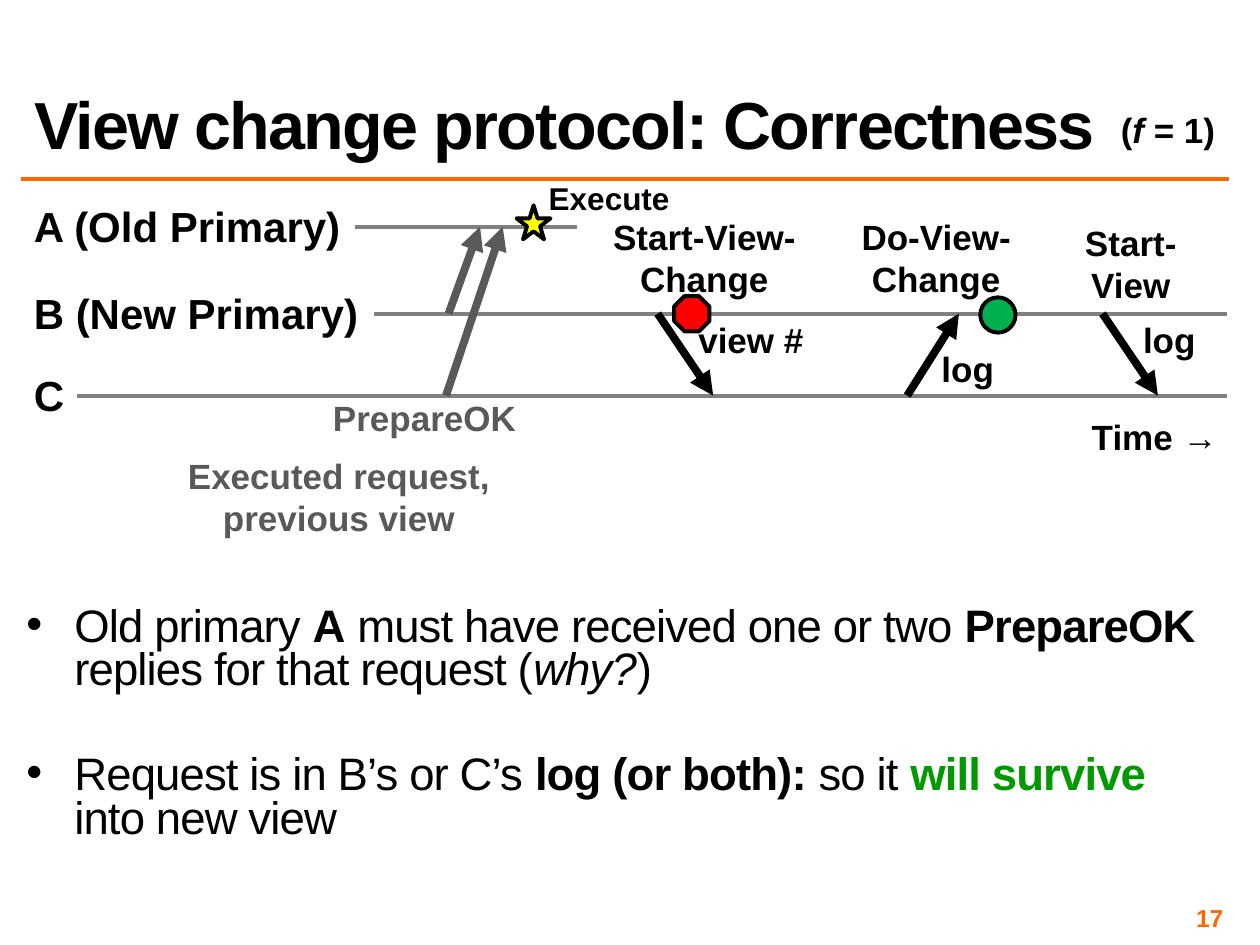
from pptx import Presentation
from pptx.dml.color import RGBColor
from pptx.enum.shapes import MSO_CONNECTOR, MSO_SHAPE
from pptx.enum.text import MSO_ANCHOR, PP_ALIGN
from pptx.oxml.ns import qn
from pptx.util import Inches, Pt
from lxml.etree import SubElement

BLACK = RGBColor(0x00, 0x00, 0x00)
GRAY = RGBColor(0x80, 0x80, 0x80)
DARK_GRAY = RGBColor(0x59, 0x59, 0x59)
ORANGE = RGBColor(0xFF, 0x66, 0x00)
DARK_GREEN = RGBColor(0x00, 0x99, 0x00)
GREEN = RGBColor(0x00, 0xB0, 0x50)
RED = RGBColor(0xFF, 0x00, 0x00)
YELLOW = RGBColor(0xFF, 0xFF, 0x00)
LANES = {"A": 0.43, "B": 1.12, "C": 1.77}


def add_run(p, text, size, color=BLACK, bold=True, italic=False, spacing=0):
    """Append one formatted run to a paragraph."""
    r = p.add_run()
    r.text = text
    r.font.name = "Arial"
    r.font.size = Pt(size)
    r.font.bold = bold
    r.font.italic = italic
    r.font.color.rgb = color
    if spacing:
        r._r.get_or_add_rPr().set("spc", str(int(spacing * 100)))


def add_label(s, box, lines, size=20, color=BLACK, align=PP_ALIGN.CENTER, wrap=False):
    """Add a bold text box with one paragraph per line."""
    tf = s.shapes.add_textbox(*map(Inches, box)).text_frame
    tf.word_wrap = wrap
    for i, line in enumerate(lines):
        p = tf.paragraphs[0] if i == 0 else tf.add_paragraph()
        p.alignment = align
        add_run(p, line, size, color)
    return tf


def add_line(s, start, end, color, width, arrow=False):
    """Draw a straight line, with an optional arrowhead at its end."""
    c = s.shapes.add_connector(MSO_CONNECTOR.STRAIGHT, *map(Inches, (*start, *end)))
    c.line.color.rgb = color
    c.line.width = Pt(width)
    SubElement(c._element.spPr, qn("a:effectLst"))
    if arrow:
        SubElement(c.line._get_or_add_ln(), qn("a:tailEnd"), type="triangle")


def add_marker(s, kind, x, y, size, fill):
    """Add an outlined event marker."""
    sp = s.shapes.add_shape(kind, *map(Inches, (x, y, size, size)))
    sp.shadow.inherit = False
    sp.fill.solid()
    sp.fill.fore_color.rgb = fill
    sp.line.color.rgb = BLACK
    sp.line.width = Pt(2.25)


def add_header(s, box):
    """Place the title, the fault assumption and the rule below them."""
    x, y, w, h = box
    title = s.shapes.title
    title.left, title.top, title.width, title.height = map(Inches, box)
    tf = title.text_frame
    tf.word_wrap = True
    tf.vertical_anchor = MSO_ANCHOR.BOTTOM
    p = tf.paragraphs[0]
    p.alignment = PP_ALIGN.LEFT
    p.line_spacing = 0.8
    add_run(p, "View change protocol: Correctness", 38, spacing=-1)
    add_line(s, (x, y + h + 0.08), (x + w, y + h + 0.08), ORANGE, 2)
    p = add_label(s, (x + w - 0.96, y + 0.64, 0.96, 0.44), ["("]).paragraphs[0]
    add_run(p, "f", 20, italic=True)
    add_run(p, " = 1)", 20)


def add_lanes(s, box):
    """Draw the three replica lanes with their names and the time axis label."""
    x, y, w, h = box
    lanes = [("A", "A (Old Primary)", 2.65, 4.41),
             ("B", "B (New Primary)", 2.8, 9.57),
             ("C", "C", 0.44, 9.57)]
    for key, name, start, end in lanes:
        lane_y = y + LANES[key]
        add_label(s, (x, lane_y - 0.26, start, 0.5), [name], 24, align=PP_ALIGN.LEFT)
        add_line(s, (x + start, lane_y), (x + end, lane_y), GRAY, 2.25)
    add_label(s, (x + 8.39, y + 1.88, 1.21, 0.44), ["Time →"])


def add_previous_view(s, box):
    """Show the request that was executed in the previous view."""
    x, y, w, h = box
    for start, lane, end in [(2.16, "C", 2.61), (2.18, "B", 2.43)]:
        add_line(s, (x + start, y + LANES[lane]), (x + end, y + LANES["A"]),
                 DARK_GRAY, 4.5, True)
    add_label(s, (x + 1.12, y + 1.73, 1.74, 0.44), ["PrepareOK"], color=DARK_GRAY)
    add_label(s, (x, y + 2.19, 2.62, 0.77), ["Executed request,", "previous view"],
              color=DARK_GRAY)
    add_label(s, (x + 2.87, y, 1.17, 0.4), ["Execute"], 18)
    add_marker(s, MSO_SHAPE.STAR_5_POINT, x + 2.72, y + 0.26, 0.27, YELLOW)


def add_message(s, box, name, name_y, arrow, lanes, payload, payload_box):
    """Draw one view change message: name, arrow between lanes and payload."""
    x, y, w, h = box
    ends = [(x + dx, y + LANES[lane]) for dx, lane in zip(arrow, lanes)]
    add_line(s, *ends, BLACK, 4.5, True)
    add_label(s, (x, y + name_y, w, 0.77), [name], wrap=True)
    dx, dy, width = payload_box
    add_label(s, (x + dx, y + dy, width, 0.44), [payload])


def add_timeline(s, box):
    """Build the message diagram."""
    x, y, w, h = box
    add_lanes(s, box)
    add_previous_view(s, (x + 1.21, y, 4.04, h))
    add_message(s, (x + 8.24, y, 1.13, h), "Start-View", 0.34,
                (0.34, 0.78), "BC", "log", (0.56, 1.11, 0.62))
    add_message(s, (x + 4.55, y, 1.74, h), "Start-View-Change", 0.29,
                (0.5, 0.94), "BC", "view #", (0.72, 1.11, 1.04))
    add_message(s, (x + 6.42, y, 1.68, h), "Do-View-Change", 0.29,
                (0.61, 1.02), "CB", "log", (0.78, 1.34, 0.62))
    add_marker(s, MSO_SHAPE.OCTAGON, x + 5.18, y + 0.98, 0.28, RED)
    add_marker(s, MSO_SHAPE.OVAL, x + 7.61, y + 0.99, 0.28, GREEN)


def add_bullets(s, box):
    """Add the two correctness arguments."""
    bullets = [
        [("Old primary ", {}), ("A", {"bold": True}),
         (" must have received one or two ", {}), ("PrepareOK", {"bold": True}),
         (" replies for that request (", {}), ("why?", {"italic": True}), (")", {})],
        [("Request is in B’s or C’s ", {}), ("log (or both): ", {"bold": True}),
         ("so it ", {}), ("will survive ", {"bold": True, "color": DARK_GREEN}),
         ("into new view", {})],
    ]
    tf = s.shapes.add_textbox(*map(Inches, box)).text_frame
    tf.word_wrap = True
    tf.margin_left = tf.margin_right = tf.margin_top = tf.margin_bottom = Inches(0.04)
    for i, runs in enumerate(bullets):
        p = tf.paragraphs[0] if i == 0 else tf.add_paragraph()
        p.line_spacing = 0.8
        p.space_before = Pt(35 * i)
        pPr = p._p.get_or_add_pPr()
        pPr.set("marL", str(Inches(0.38)))
        pPr.set("indent", str(-Inches(0.38)))
        SubElement(pPr, qn("a:buFont"), typeface="Arial")
        SubElement(pPr, qn("a:buChar"), char="•")
        for text, style in runs:
            add_run(p, text, 26, **{"bold": False, "spacing": -0.5, **style})


def add_page_number(s, box):
    """Add the page number at the lower right."""
    tf = add_label(s, box, ["17"], 14, ORANGE, PP_ALIGN.RIGHT, True)
    tf.vertical_anchor = MSO_ANCHOR.MIDDLE
    tf.margin_left = tf.margin_right = tf.margin_top = tf.margin_bottom = Inches(0.04)


def main():
    """Build and save the slide."""
    prs = Presentation()
    prs.slide_width, prs.slide_height = Inches(10), Inches(7.5)
    s = prs.slides.add_slide(prs.slide_layouts[5])
    add_header(s, (0.17, 0.17, 9.58, 1.17))
    add_timeline(s, (0.17, 1.37, 9.58, 2.96))
    add_bullets(s, (0.17, 4.78, 9.58, 2.07))
    add_page_number(s, (7.42, 7.17, 2.33, 0.23))
    prs.save("out.pptx")


if __name__ == "__main__":
    main()
